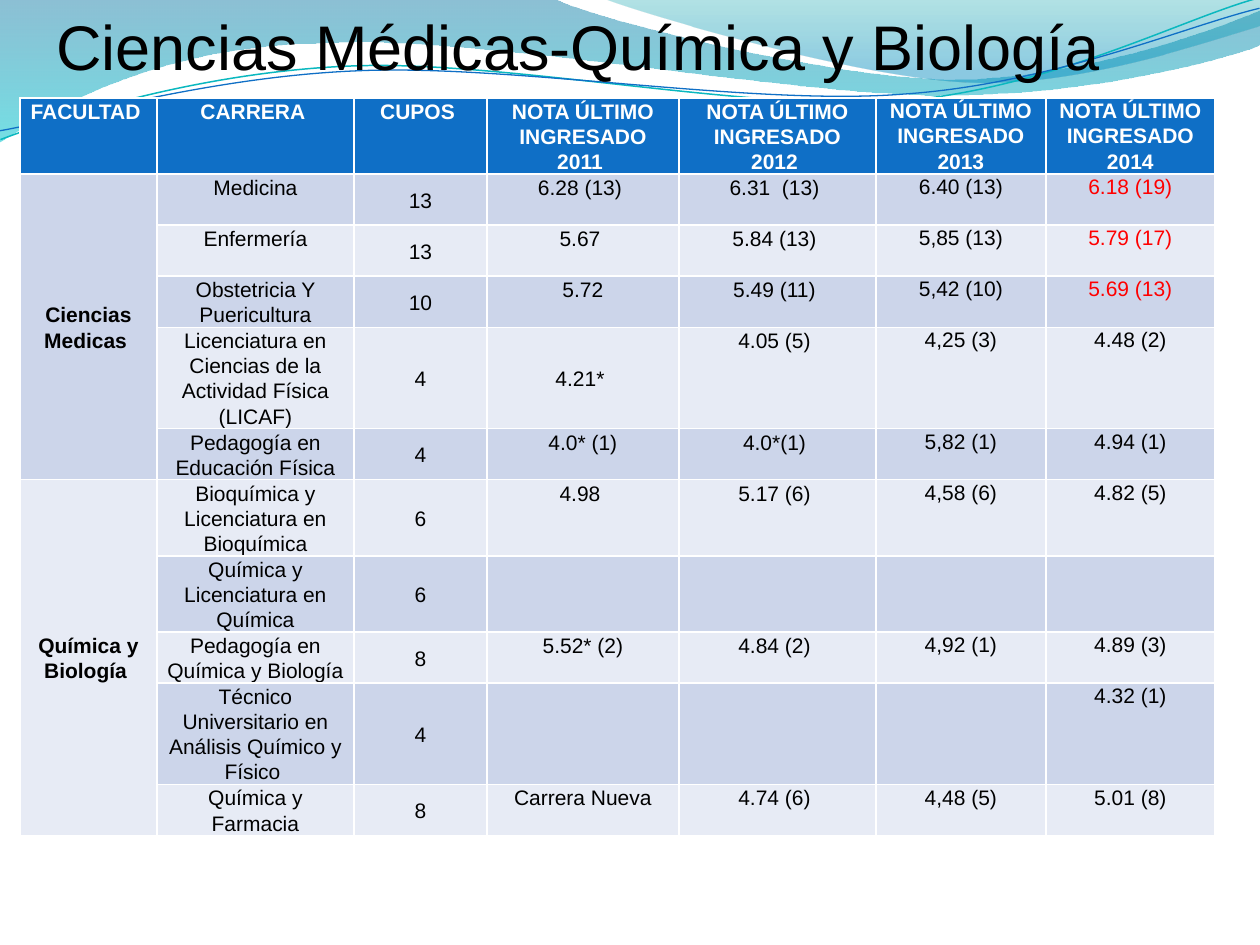
from lxml.etree import SubElement
from pptx import Presentation
from pptx.dml.color import RGBColor
from pptx.enum.text import MSO_ANCHOR, MSO_AUTO_SIZE, PP_ALIGN
from pptx.oxml.ns import qn
from pptx.util import Emu, Pt

PX = 914400 / 126
FONT = "Arial"

BLACK = RGBColor(0x00, 0x00, 0x00)
WHITE = RGBColor(0xFF, 0xFF, 0xFF)
RED = RGBColor(0xFF, 0x00, 0x00)
BLUE = RGBColor(0x0F, 0x6F, 0xC6)
TURQUOISE = RGBColor(0x0A, 0xB8, 0xBF)
DARK_BAND = RGBColor(0xCC, 0xD5, 0xEA)
LIGHT_BAND = RGBColor(0xE7, 0xEB, 0xF5)
DEEP_TEAL = RGBColor(0x00, 0x74, 0xA1)
AQUA = RGBColor(0x00, 0xC6, 0xCF)
SEA_GREEN = RGBColor(0x00, 0xA1, 0xA9)
OCEAN = RGBColor(0x00, 0x8B, 0xBF)

# A wave is a start point, then steps: one point for a line, three for a curve.
LEFT_WAVE = [
    (0, 0),
    [(554, -1)],
    [(600, 21), (837, 79), (955, 79)],
    [(1075, 79), (1207, 33), (1260, 11)],
    [(1261, 45)],
    [(1239, 55), (1096, 96), (940, 95)],
    [(784, 95), (481, 35), (324, 43)],
    [(163, 45), (58, 105), (-1, 142)],
]
RIGHT_WAVE = [
    (604, -1),
    [(641, 14), (859, 78), (969, 82)],
    [(1079, 87), (1211, 40), (1260, 26)],
    [(1260, 0)],
]
TURQUOISE_CURVE = [
    (-2, 110),
    [(59, 90), (200, 52), (350, 53)],
    [(499, 53), (745, 117), (896, 114)],
    [(1049, 109), (1184, 45), (1260, 28)],
]
BLUE_CURVE = [
    (-2, 101),
    [(57, 94), (207, 57), (357, 58)],
    [(509, 58), (750, 112), (902, 107)],
    [(1052, 104), (1188, 52), (1262, 38)],
]
CURVE_ROTATION = 357.3

COLUMN_WIDTHS = [137, 197, 133, 192, 197, 170, 169]
HEADER_HEIGHT, ROW_HEIGHT = 76, 51
FACULTY_SIZE = 5
FACULTY, CAREER, PLACES, GRADE_2011, GRADE_2012, GRADE_2013, GRADE_2014 = range(7)
ROWS = [
    ["FACULTAD ", "CARRERA ", "CUPOS ", "NOTA ÚLTIMO INGRESADO 2011 ",
     "NOTA ÚLTIMO INGRESADO 2012 ", "NOTA ÚLTIMO INGRESADO 2013",
     "NOTA ÚLTIMO INGRESADO 2014"],
    ["Ciencias Medicas ", "Medicina", "13", "6.28 (13) ", "6.31  (13) ",
     "6.40 (13)", "6.18 (19)"],
    ["", "Enfermería", "13", "5.67 ", "5.84 (13) ", "5,85 (13)", "5.79 (17)"],
    ["", "Obstetricia Y Puericultura", "10", "5.72", "5.49 (11) ",
     "5,42 (10)", "5.69 (13)"],
    ["", "Licenciatura en Ciencias de la Actividad Física (LICAF)", "4",
     "4.21* ", "4.05 (5) ", "4,25 (3)", "4.48 (2)"],
    ["", "Pedagogía en Educación Física", "4", "4.0* (1)", "4.0*(1) ",
     "5,82 (1)", "4.94 (1)"],
    ["Química y Biología ", "Bioquímica y Licenciatura en Bioquímica", "6",
     "4.98 ", "5.17 (6) ", "4,58 (6)", "4.82 (5)"],
    ["", "Química y Licenciatura en Química", "6", "", "", "", ""],
    ["", "Pedagogía en Química y Biología", "8", "5.52* (2)", "4.84 (2) ",
     "4,92 (1)", "4.89 (3)"],
    ["", "Técnico Universitario en Análisis Químico y Físico ", "4", "", "",
     "", "4.32 (1)"],
    ["", "Química y Farmacia", "8", "Carrera Nueva", "4.74 (6) ",
     "4,48 (5)", "5.01 (8)"],
]
RED_GRADES = {(row, GRADE_2014) for row in (1, 2, 3)}
CENTRED_GRADES = {(4, GRADE_2011)}


def px(length):
    return Emu(round(length * PX))


def add_wave(page, wave, close):
    """Lay out all points as line segments, then join each three into a curve."""
    start, *steps = wave
    builder = page.shapes.build_freeform(*start, scale=PX)
    builder.add_line_segments([point for step in steps for point in step], close=close)
    shape = builder.convert_to_shape()
    shape.shadow.inherit = False
    segments = list(shape._element.spPr.iter(qn("a:lnTo")))
    for step in steps:
        group, segments = segments[:len(step)], segments[len(step):]
        if len(step) == 3:
            group[0].tag = qn("a:cubicBezTo")
            for segment in group[1:]:
                group[0].append(segment[0])
                segment.getparent().remove(segment)
    return shape


def add_gradient_wave(page, wave, stops):
    """Add a filled wave; stops are (position, colour, opacity percent), top first."""
    shape = add_wave(page, wave, close=True)
    shape.line.fill.background()
    shape.fill.gradient()
    shape.fill.gradient_angle = 270
    for stop, (position, color, _) in zip(shape.fill.gradient_stops, stops):
        stop.position = position
        stop.color.rgb = color
    colors = shape._element.spPr.iter(qn("a:srgbClr"))
    for element, (_, _, opacity) in zip(colors, stops):
        SubElement(element, qn("a:alpha")).set("val", str(opacity * 1000))


def add_curve(page, wave, color, width):
    shape = add_wave(page, wave, close=False)
    shape.rotation = CURVE_ROTATION
    shape.fill.background()
    shape.line.color.rgb = color
    shape.line.width = Pt(width)


def write(para, text, size, color, bold=False):
    span = para.add_run()
    span.text = text
    span.font.name = FONT
    span.font.size = Pt(size)
    span.font.bold = bold
    span.font.color.rgb = color


def fill_cell(cell, text, fill, color=BLACK, bold=False, middle=False, inset=9):
    cell.fill.solid()
    cell.fill.fore_color.rgb = fill
    if not text:
        return
    cell.margin_left = cell.margin_right = px(inset)
    cell.margin_top = Pt(0.4 if inset else 0)
    cell.margin_bottom = 0
    cell.vertical_anchor = MSO_ANCHOR.MIDDLE if middle else MSO_ANCHOR.TOP
    para = cell.text_frame.paragraphs[0]
    para.alignment = PP_ALIGN.CENTER
    para.line_spacing = 1.07
    para.space_after = Pt(8)
    write(para, text, 12, color, bold)


def add_grades_table(page, left, top):
    """Add the table; rows with more than two lines of text grow to fit."""
    heights = [HEADER_HEIGHT] + [ROW_HEIGHT] * (len(ROWS) - 1)
    frame = page.shapes.add_table(len(ROWS), len(COLUMN_WIDTHS), px(left), px(top),
                                  px(sum(COLUMN_WIDTHS)), px(sum(heights)))
    table = frame.table
    for column, width in zip(table.columns, COLUMN_WIDTHS):
        column.width = px(width)
    for row, height in zip(table.rows, heights):
        row.height = px(height)
    for row, texts in enumerate(ROWS):
        header = row == 0
        band = BLUE if header else DARK_BAND if row % 2 else LIGHT_BAND
        for column, text in enumerate(texts):
            place = (row, column)
            fill_cell(
                table.cell(*place), text, band,
                color=WHITE if header else RED if place in RED_GRADES else BLACK,
                bold=header or column == FACULTY,
                middle=place in CENTRED_GRADES
                or not header and column in (FACULTY, PLACES),
                inset=0 if column >= GRADE_2013 else 9)
    for first in range(1, len(ROWS), FACULTY_SIZE):
        last = table.cell(first + FACULTY_SIZE - 1, FACULTY)
        table.cell(first, FACULTY).merge(last)


def add_title(page, text):
    box = page.shapes.add_textbox(px(44), px(1), px(1121), px(89))
    box.text_frame.word_wrap = True
    box.text_frame.auto_size = MSO_AUTO_SIZE.SHAPE_TO_FIT_TEXT
    write(box.text_frame.paragraphs[0], text, 36, BLACK)


def main():
    deck = Presentation()
    deck.slide_width, deck.slide_height = px(1260), px(945)
    page = deck.slides.add_slide(deck.slide_layouts[6])
    add_gradient_wave(page, LEFT_WAVE, [(0, DEEP_TEAL, 45), (1, AQUA, 55)])
    add_gradient_wave(page, RIGHT_WAVE, [(0, SEA_GREEN, 30), (0.8, OCEAN, 45)])
    add_curve(page, TURQUOISE_CURVE, TURQUOISE, 0.85)
    add_curve(page, BLUE_CURVE, BLUE, 0.75)
    add_grades_table(page, 20, 98)
    add_title(page, "Ciencias Médicas-Química y Biología")
    deck.save("out.pptx")


if __name__ == "__main__":
    main()
